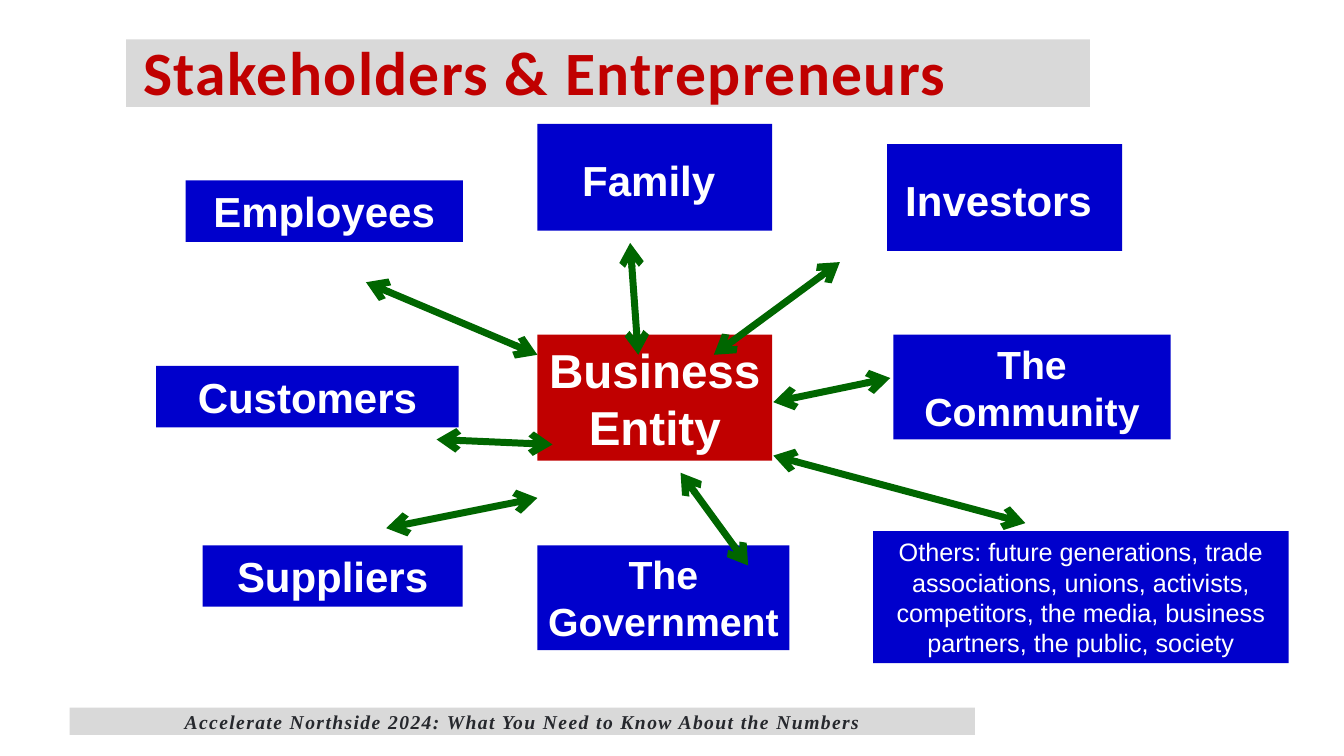
import pptx
import pptx.util
import pptx.dml.color
import pptx.enum.shapes
import pptx.enum.text
import pptx.oxml.ns
import lxml.etree

COLOURS = {
    "white": "FFFFFF",
    "red": "C00000",
    "blue": "0000CC",
    "green": "006600",
    "grey": "D9D9D9",
    "ink": "26282D",
}
PX = 9144
ANCHOR = pptx.enum.text.MSO_ANCHOR
CENTRE = pptx.enum.text.PP_ALIGN.CENTER
LEFT = pptx.enum.text.PP_ALIGN.LEFT


class Page:
    def __init__(self, deck):
        self.slide = deck.slides.add_slide(deck.slide_layouts[5])
        self.shapes = self.slide.shapes

    def colour(self, name):
        return pptx.dml.color.RGBColor.from_string(COLOURS[name])

    def paint(self, shape, fill):
        shape.fill.solid()
        shape.fill.fore_color.rgb = self.colour(fill)
        shape.line.fill.background()

    def label(self, shape, text, size, colour="white", name="Arial", bold=True, italic=False,
              align=CENTRE, anchor=ANCHOR.MIDDLE, insets=(8, 5, 8, 5), spacing=None, tracking=None):
        frame = shape.text_frame
        frame.word_wrap = True
        frame.auto_size = pptx.enum.text.MSO_AUTO_SIZE.NONE
        frame.vertical_anchor = anchor
        frame.margin_left, frame.margin_top, frame.margin_right, frame.margin_bottom = (
            inset * PX for inset in insets)
        para = frame.paragraphs[0]
        para.text = text
        para.alignment = align
        if spacing:
            para.line_spacing = spacing
        font = para.font
        font.size = pptx.util.Pt(size)
        font.name = name
        font.bold = bold
        font.italic = italic
        font.color.rgb = self.colour(colour)
        if tracking:
            font._element.set("spc", str(tracking))

    def title(self, text, left, top, width, height, **style):
        shape = self.shapes.title
        shape.left, shape.top, shape.width, shape.height = (
            length * PX for length in (left, top, width, height))
        self.paint(shape, "grey")
        self.label(shape, text, **style)

    def box(self, text, left, top, width, height, size, fill="blue", **style):
        shape = self.shapes.add_shape(
            pptx.enum.shapes.MSO_SHAPE.RECTANGLE,
            left * PX, top * PX, width * PX, height * PX)
        shape.shadow.inherit = False
        self.paint(shape, fill)
        self.label(shape, text, size, **style)

    def arrow(self, *ends):
        line = self.shapes.add_connector(
            pptx.enum.shapes.MSO_CONNECTOR.STRAIGHT, *(end * PX for end in ends))
        line.line.color.rgb = self.colour("green")
        line.line.width = pptx.util.Pt(5)
        outline = line.line._get_or_add_ln()
        for tag in ("a:headEnd", "a:tailEnd"):
            lxml.etree.SubElement(outline, pptx.oxml.ns.qn(tag), type="arrow")
        lxml.etree.SubElement(line._element.spPr, pptx.oxml.ns.qn("a:effectLst"))


def main():
    deck = pptx.Presentation()
    deck.slide_width = 1333 * PX
    deck.slide_height = 750 * PX
    page = Page(deck)

    page.title("Stakeholders & Entrepreneurs", 125, 39, 956, 67, size=44, colour="red",
               name="Calibri", align=LEFT, anchor=ANCHOR.TOP, insets=(17, 9, 0, 0),
               spacing=0.8, tracking=100)

    page.box("Business Entity", 533, 332, 233, 125, 34, fill="red")
    for stakeholder in (
        ("The Government", 533, 541, 250, 104, 28),
        ("Suppliers", 201, 541, 258, 61, 30),
        ("Employees", 184, 179, 275, 61, 30),
        ("Customers", 155, 363, 300, 61, 30),
        ("The Community", 886, 332, 275, 104, 28),
    ):
        page.box(*stakeholder)
    for name, left, top in (("Family", 533, 123), ("Investors", 880, 143)):
        page.box(name, left, top, 233, 106, 30, insets=(8, 10, 20, 5))
    page.box("Others: future generations, trade associations, unions, activists, "
             "competitors, the media, business partners, the public, society",
             866, 527, 412, 131, 18, bold=False)

    for ends in (
        (625, 241, 633, 352),
        (363, 280, 533, 352),
        (708, 352, 833, 260),
        (767, 452, 1017, 519),
        (767, 399, 883, 375),
        (383, 524, 533, 494),
        (433, 436, 548, 441),
        (675, 469, 742, 561),
    ):
        page.arrow(*ends)

    page.box("Accelerate Northside 2024: What You Need to Know About the Numbers",
             69, 702, 898, 27, 14, fill="grey", colour="ink", name="Times New Roman",
             italic=True, anchor=ANCHOR.TOP, insets=(0, 7, 0, 0), spacing=0.8, tracking=100)

    deck.save("out.pptx")


if __name__ == "__main__":
    main()
